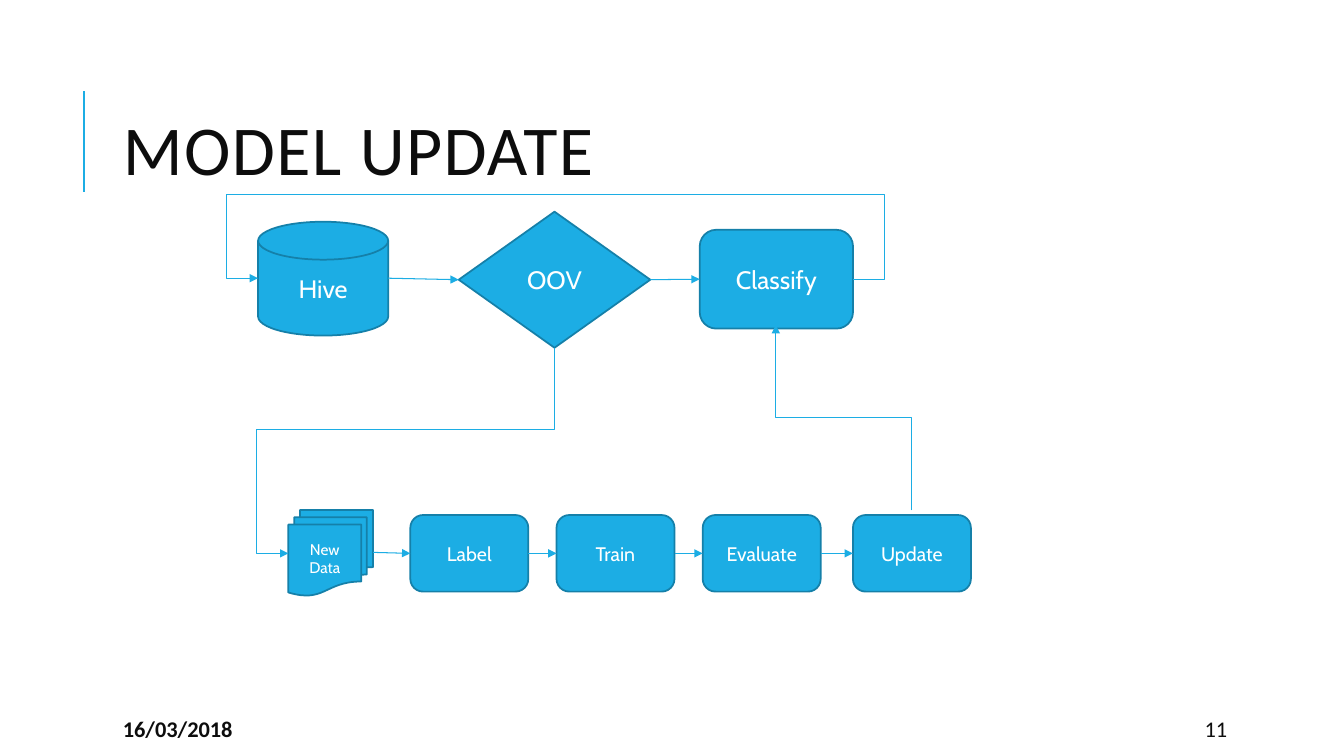
"""Build the model update flow slide."""
from typing import NamedTuple

from lxml import etree
from pptx import Presentation
from pptx.dml.color import RGBColor
from pptx.enum.shapes import MSO_CONNECTOR, MSO_SHAPE
from pptx.enum.text import MSO_ANCHOR, PP_ALIGN
from pptx.oxml.ns import qn
from pptx.shapes.autoshape import Shape
from pptx.shapes.connector import Connector
from pptx.shapes.shapetree import SlideShapes
from pptx.util import Emu, Pt

PX = 9144
BLUE = RGBColor(0x1C, 0xAD, 0xE4)
DARK_BLUE = RGBColor(0x15, 0x80, 0xA9)
WHITE = RGBColor(0xFF, 0xFF, 0xFF)
INK = RGBColor(0x0D, 0x0D, 0x0D)
BODY_FONT = "Cabin"
HEADING_FONT = "Calibri"
DISK = MSO_SHAPE.FLOWCHART_MAGNETIC_DISK
DIAMOND = MSO_SHAPE.DIAMOND
ROUNDED = MSO_SHAPE.ROUNDED_RECTANGLE
DOCUMENTS = MSO_SHAPE.FLOWCHART_MULTIDOCUMENT
STRAIGHT = MSO_CONNECTOR.STRAIGHT
ELBOW = MSO_CONNECTOR.ELBOW
MIDDLE = MSO_ANCHOR.MIDDLE
CENTER = PP_ALIGN.CENTER
JOINABLE = (DIAMOND, ROUNDED)
LEFT_SITE, RIGHT_SITE = 1, 3


class Caption(NamedTuple):
    """Plain text on the slide."""
    text: str
    left: int
    top: int
    width: int
    height: int
    size: int
    bold: bool = False
    line_spacing: float = 1.0
    tracking: int = 0


class Stage(NamedTuple):
    """One stage of the flow."""
    label: str
    kind: MSO_SHAPE
    left: int
    top: int
    width: int
    height: int
    size: int


class Detour(NamedTuple):
    """A bent arrow: its ends before rotation, and its bends in thousandths of a percent."""
    begin: tuple[int, int]
    end: tuple[int, int]
    rotation: int
    bends: tuple[int, ...]


CAPTIONS = (
    Caption("MODEL UPDATE", 112, 81, 1155, 147, 50, line_spacing=0.8, tracking=100),
    Caption("16/03/2018", 112, 708, 236, 30, 16, bold=True),
    Caption("11", 1185, 708, 106, 30, 16),
)
CLASSIFYING = (
    Stage("Hive", DISK, 256, 220, 129, 113, 18),
    Stage("OOV", DIAMOND, 455, 210, 190, 135, 18),
    Stage("Classify", ROUNDED, 694, 228, 152, 98, 18),
)
TRAINING_STEPS = (("Label", 407), ("Train", 552), ("Evaluate", 697), ("Update", 846))
TRAINING = (
    Stage("New Data", DOCUMENTS, 286, 506, 84, 85, 11),
    *(Stage(label, ROUNDED, left, 511, 117, 76, 14) for label, left in TRAINING_STEPS),
)
DETOURS = (
    Detour((316, 315), (520, 579), 90, (39600, 111800)),
    Detour((745, 482), (929, 347), 270, (50000,)),
    Detour((846, 277), (256, 276), 0, (-5300, 8500000, 105300)),
)


def px(length: int) -> Emu:
    """Turn px into EMU."""
    return Emu(length * PX)


def add_caption(shapes: SlideShapes, caption: Caption) -> None:
    """Draw plain text."""
    box = shapes.add_textbox(px(caption.left), px(caption.top), px(caption.width), px(caption.height))
    frame = box.text_frame
    frame.word_wrap = True
    frame.vertical_anchor = MIDDLE
    paragraph = frame.paragraphs[0]
    paragraph.text = caption.text
    paragraph.line_spacing = caption.line_spacing
    font = paragraph.runs[0].font
    font.name = HEADING_FONT
    font.size = Pt(caption.size)
    font.bold = caption.bold
    font.color.rgb = INK
    if caption.tracking:
        paragraph.runs[0]._r.get_or_add_rPr().set("spc", str(caption.tracking))


def add_stage(shapes: SlideShapes, stage: Stage) -> Shape:
    """Draw one stage with its label."""
    shape = shapes.add_shape(stage.kind, px(stage.left), px(stage.top), px(stage.width), px(stage.height))
    shape.shadow.inherit = False
    shape.fill.solid()
    shape.fill.fore_color.rgb = BLUE
    shape.line.color.rgb = DARK_BLUE
    shape.line.width = Pt(1.25)
    shape.text_frame.text = stage.label
    shape.text_frame.vertical_anchor = MIDDLE
    paragraph = shape.text_frame.paragraphs[0]
    paragraph.alignment = CENTER
    font = paragraph.runs[0].font
    font.name = BODY_FONT
    font.size = Pt(stage.size)
    font.color.rgb = WHITE
    return shape


def add_line(shapes: SlideShapes, kind: MSO_CONNECTOR, begin: tuple[int, int], end: tuple[int, int],
             width: float = 0.75, arrow: bool = True) -> Connector:
    """Draw a line, with an arrowhead at its end if wanted."""
    line = shapes.add_connector(kind, px(begin[0]), px(begin[1]), px(end[0]), px(end[1]))
    line.line.color.rgb = BLUE
    line.line.width = Pt(width)
    properties = line._element.spPr
    if arrow:
        etree.SubElement(properties.find(qn("a:ln")), qn("a:tailEnd"), type="triangle")
    etree.SubElement(properties, qn("a:effectLst"))
    return line


def add_row(shapes: SlideShapes, stages: tuple[Stage, ...]) -> None:
    """Draw a row of stages and the arrows from each to the next."""
    drawn = [add_stage(shapes, stage) for stage in stages]
    for index, (source, target) in enumerate(zip(stages, stages[1:])):
        begin = (source.left + source.width, source.top + source.height // 2)
        end = (target.left, target.top + target.height // 2)
        arrow = add_line(shapes, STRAIGHT, begin, end)
        if source.kind in JOINABLE:
            arrow.begin_connect(drawn[index], RIGHT_SITE)
        if target.kind in JOINABLE:
            arrow.end_connect(drawn[index + 1], LEFT_SITE)


def add_detour(shapes: SlideShapes, detour: Detour) -> None:
    """Draw a bent arrow."""
    arrow = add_line(shapes, ELBOW, detour.begin, detour.end)
    properties = arrow._element.spPr
    properties.find(qn("a:xfrm")).set("rot", str(detour.rotation * 60000))
    geometry = properties.find(qn("a:prstGeom"))
    geometry.set("prst", f"bentConnector{len(detour.bends) + 2}")
    adjustments = geometry.find(qn("a:avLst"))
    for number, bend in enumerate(detour.bends, 1):
        etree.SubElement(adjustments, qn("a:gd"), name=f"adj{number}", fmla=f"val {bend}")


def main() -> None:
    """Build and save the slide."""
    presentation = Presentation()
    presentation.slide_width = px(1333)
    presentation.slide_height = px(750)
    shapes = presentation.slides.add_slide(presentation.slide_layouts[6]).shapes
    add_line(shapes, STRAIGHT, (83, 190), (83, 90), width=1.5, arrow=False)
    for caption in CAPTIONS:
        add_caption(shapes, caption)
    for row in (CLASSIFYING, TRAINING):
        add_row(shapes, row)
    for detour in DETOURS:
        add_detour(shapes, detour)
    presentation.save("out.pptx")


if __name__ == "__main__":
    main()
